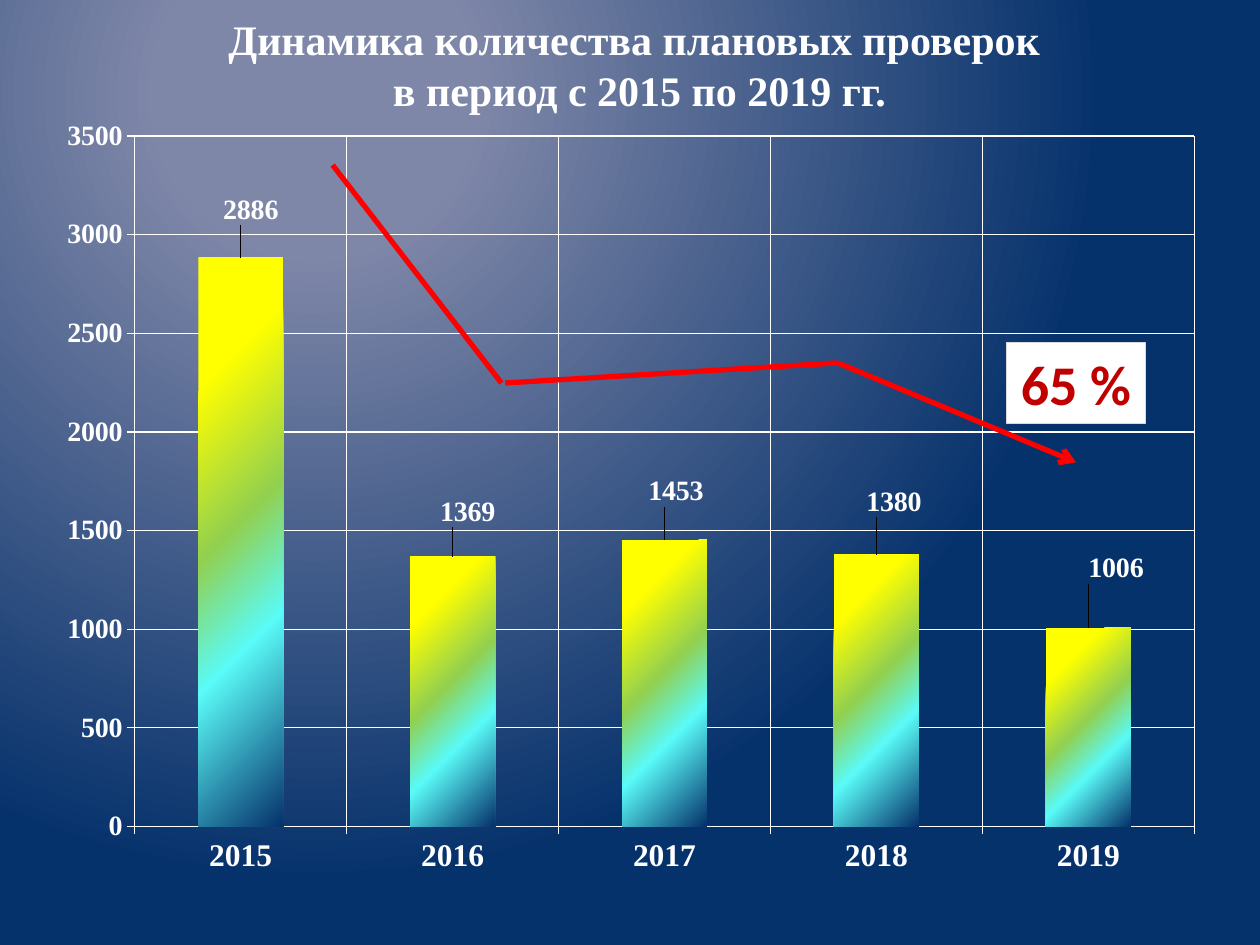
from typing import NamedTuple

from pptx import Presentation
from pptx.chart.data import CategoryChartData
from pptx.dml.color import RGBColor
from pptx.enum.chart import XL_CHART_TYPE as ChartType, XL_LABEL_POSITION as LabelPosition
from pptx.enum.chart import XL_TICK_MARK as TickMark
from pptx.enum.shapes import MSO_CONNECTOR as Connector, MSO_SHAPE as Preset
from pptx.enum.text import MSO_ANCHOR as Anchor, MSO_AUTO_SIZE as AutoSize, PP_ALIGN as Align
from pptx.oxml import parse_xml
from pptx.oxml.ns import nsdecls, qn
from pptx.util import Inches, Pt

SERIF = "Times New Roman"
WHITE, RED, NAVY = "FFFFFF", "FF0000", "06326C"


class Area(NamedTuple):
    left: float
    top: float
    width: float
    height: float

    def inches(self):
        return [Inches(value) for value in self]


class YearCount(NamedTuple):
    """A bar, with the shift of its label in inches."""
    year: str
    checks: int
    label_right: float
    label_down: float


class Segment(NamedTuple):
    start: tuple[float, float]
    end: tuple[float, float]
    arrow: bool = False


TITLE_AREA = Area(0.49, 0, 9.17, 1.02)
CHART_AREA = Area(0.35, 0.84, 9.31, 6.22)
PLOT_AREA = Area(1.07, 1.08, 8.41, 5.48)
BADGE_AREA = Area(7.99, 2.72, 1.1, 0.64)
COUNTS = [
    YearCount("2015", 2886, 0.08, -0.21),
    YearCount("2016", 1369, 0.12, -0.19),
    YearCount("2017", 1453, 0.09, -0.22),
    YearCount("2018", 1380, 0.14, -0.25),
    YearCount("2019", 1006, 0.22, -0.31),
]
TREND = [
    Segment((2.64, 1.31), (3.98, 3.04)),
    Segment((4.01, 3.04), (6.65, 2.88)),
    Segment((6.65, 2.88), (8.54, 3.67), arrow=True),
]
BACKGROUND_STOPS = [(20, "7F87A8"), (100, NAVY)]
BAR_STOPS = [(20, "FFFF00"), (47, "92D050"), (67, "5AFBF8"), (100, NAVY)]
CIRCLE = ('<a:path path="circle"><a:fillToRect l="50000" t="20000" '
          'r="100000" b="100000"/></a:path>')
DIAGONAL = '<a:lin ang="2700000" scaled="0"/>'


def color(value: str) -> RGBColor:
    return RGBColor.from_string(value)


def style_font(font, size: float, fill: str = WHITE, name: str = SERIF, bold: bool = True):
    font.size, font.name, font.bold = Pt(size), name, bold
    font.color.rgb = color(fill)


def style_line(line, fill: str, width: float):
    line.color.rgb = color(fill)
    line.width = Pt(width)


def apply_gradient(owner, stops: list[tuple[int, str]], direction: str):
    """Replace the solid fill found directly in owner with a gradient."""
    marks = "".join(f'<a:gs pos="{place * 1000}"><a:srgbClr val="{value}"/></a:gs>'
                    for place, value in stops)
    gradient = parse_xml(f'<a:gradFill {nsdecls("a")} rotWithShape="1">'
                         f'<a:gsLst>{marks}</a:gsLst>{direction}</a:gradFill>')
    owner.replace(owner.find(qn("a:solidFill")), gradient)


def manual_layout(target: str = "", **fractions: float):
    modes = '<c:xMode val="edge"/><c:yMode val="edge"/>' if target else ""
    values = "".join(f'<c:{key} val="{value:.4f}"/>' for key, value in fractions.items())
    return parse_xml(f'<c:layout {nsdecls("c")}><c:manualLayout>'
                     f'{target}{modes}{values}</c:manualLayout></c:layout>')


def write_lines(frame, lines: list[str], **font_format):
    for number, line in enumerate(lines):
        para = frame.paragraphs[0] if number == 0 else frame.add_paragraph()
        para.alignment = Align.CENTER
        span = para.add_run()
        span.text = line
        style_font(span.font, **font_format)


def style_axis(axis, size: float):
    axis.major_tick_mark, axis.minor_tick_mark = TickMark.OUTSIDE, TickMark.NONE
    axis.has_major_gridlines = True
    style_line(axis.major_gridlines.format.line, WHITE, 0.75)
    style_line(axis.format.line, WHITE, 0.75)
    style_font(axis.tick_labels.font, size)


def add_bars(page):
    data = CategoryChartData()
    data.categories = [count.year for count in COUNTS]
    data.add_series("Series 1", [count.checks for count in COUNTS])
    chart = page.shapes.add_chart(ChartType.COLUMN_CLUSTERED, *CHART_AREA.inches(), data).chart
    chart.has_legend = chart.has_title = False
    style_font(chart.font, 16, bold=False)
    style_axis(chart.category_axis, 18)
    style_axis(chart.value_axis, 16)
    chart.value_axis.minimum_scale, chart.value_axis.maximum_scale = 0, 3500
    chart.value_axis.major_unit = 500

    plot = chart.plots[0]
    plot.gap_width, plot.vary_by_categories = 150, False
    bars = plot.series[0]
    bars.format.fill.solid()
    apply_gradient(bars.format.fill._xPr, BAR_STOPS, DIAGONAL)
    bars.data_labels.show_value = True
    style_font(bars.data_labels.font, 16)
    for number, count in enumerate(COUNTS):
        label = bars.points[number].data_label
        style_font(label.font, 16)
        label.position = LabelPosition.OUTSIDE_END
    for mark, count in zip(bars.data_labels._element.findall(qn("c:dLbl")), COUNTS):
        mark.find(qn("c:idx")).addnext(manual_layout(
            x=count.label_right / CHART_AREA.width, y=count.label_down / CHART_AREA.height))

    plot_area = chart.element.find(f'{qn("c:chart")}/{qn("c:plotArea")}')
    for layout in plot_area.findall(qn("c:layout")):
        plot_area.remove(layout)
    plot_area.insert(0, manual_layout(
        '<c:layoutTarget val="inner"/>',
        x=(PLOT_AREA.left - CHART_AREA.left) / CHART_AREA.width,
        y=(PLOT_AREA.top - CHART_AREA.top) / CHART_AREA.height,
        w=PLOT_AREA.width / CHART_AREA.width, h=PLOT_AREA.height / CHART_AREA.height))


def add_segment(page, segment: Segment):
    ends = [Inches(value) for value in (*segment.start, *segment.end)]
    connector = page.shapes.add_connector(Connector.STRAIGHT, *ends)
    style_line(connector.line, RED, 3)
    properties = connector.element.spPr
    if segment.arrow:
        properties.find(qn("a:ln")).append(
            parse_xml(f'<a:tailEnd {nsdecls("a")} type="arrow"/>'))
    properties.append(parse_xml(f'<a:effectLst {nsdecls("a")}/>'))


def add_title(page):
    frame = page.shapes.add_textbox(*TITLE_AREA.inches()).text_frame
    frame.word_wrap, frame.vertical_anchor = True, Anchor.MIDDLE
    write_lines(frame, ["Динамика количества плановых проверок ",
                        "в период с 2015 по 2019 гг."], size=24)


def add_badge(page):
    badge = page.shapes.add_shape(Preset.RECTANGLE, *BADGE_AREA.inches())
    badge.shadow.inherit = False
    badge.fill.solid()
    badge.fill.fore_color.rgb = color(WHITE)
    style_line(badge.line, "D9D9D9", 0.75)
    frame = badge.text_frame
    frame.word_wrap, frame.auto_size = False, AutoSize.SHAPE_TO_FIT_TEXT
    write_lines(frame, ["65 %"], size=32, fill="C00000", name="Calibri")


def main():
    deck = Presentation()
    deck.slide_width, deck.slide_height = Inches(10), Inches(7.5)
    page = deck.slides.add_slide(deck.slide_layouts[6])
    page.background.fill.solid()
    apply_gradient(page.element.find(f'.//{qn("p:bgPr")}'), BACKGROUND_STOPS, CIRCLE)
    add_title(page)
    add_bars(page)
    for segment in TREND:
        add_segment(page, segment)
    add_badge(page)
    deck.save("out.pptx")


if __name__ == "__main__":
    main()
